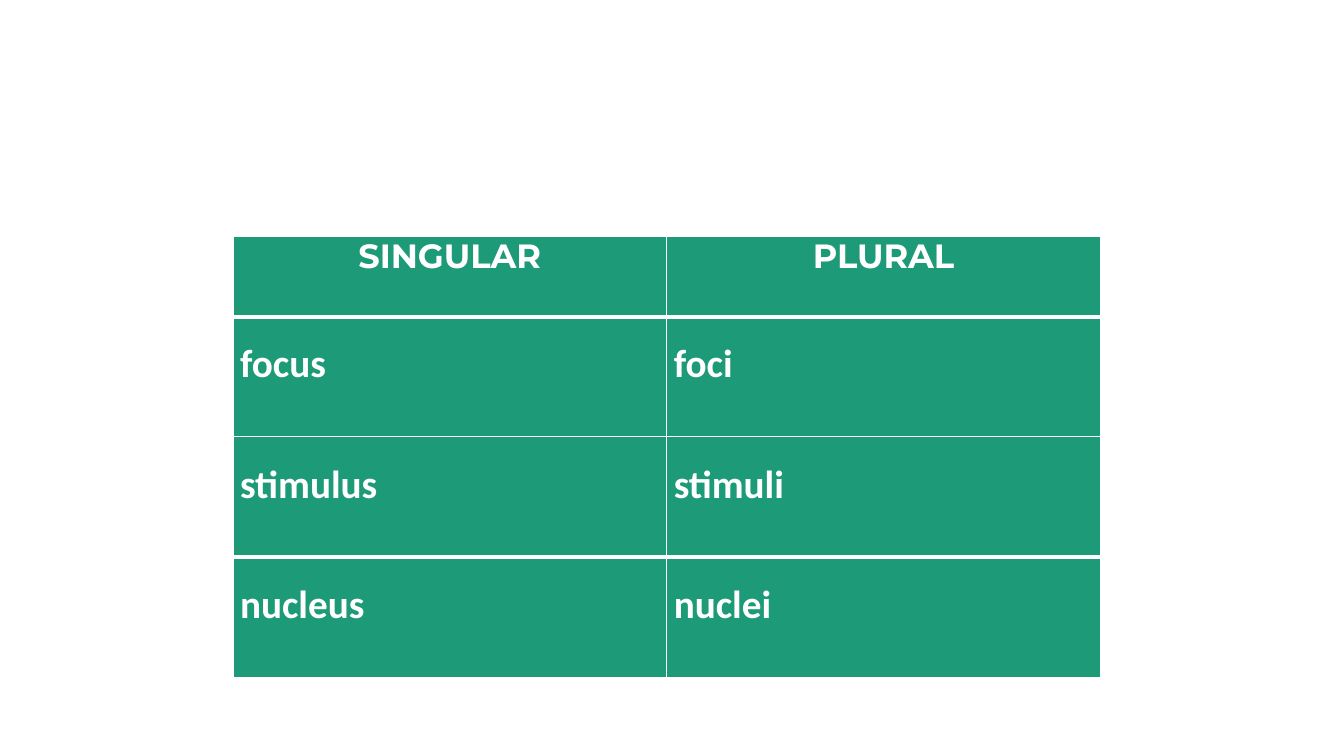
from dataclasses import dataclass

from lxml.etree import SubElement
from pptx import Presentation
from pptx.dml.color import RGBColor
from pptx.enum.text import MSO_ANCHOR, PP_ALIGN as Align
from pptx.oxml.ns import qn
from pptx.table import _Cell as Cell
from pptx.util import Cm, Pt

GREEN = "1D9A78"
WHITE = "FFFFFF"
THIN, THICK = 1, 3
COLUMN_WIDTH = 10.93


@dataclass
class WordRow:
    singular: str
    plural: str
    height: float = 3.03
    top_line: int = THIN
    bottom_line: int = THIN
    is_header: bool = False


ROWS = [
    WordRow("SINGULAR", "PLURAL", height=2.03, bottom_line=THICK, is_header=True),
    WordRow("focus", "foci", top_line=THICK),
    WordRow("stimulus", "stimuli", bottom_line=THICK),
    WordRow("nucleus", "nuclei", top_line=THICK),
]


def color(value: str) -> RGBColor:
    return RGBColor.from_string(value)


def write_text(cell: Cell, text: str, *, font: str, size: float,
               align: Align = Align.LEFT, spacing: float = 1.0) -> None:
    para = cell.text_frame.paragraphs[0]
    para.alignment = align
    para.line_spacing = spacing
    span = para.add_run()
    span.text = text
    span.font.name = font
    span.font.size = Pt(size)
    span.font.bold = True
    span.font.color.rgb = color(WHITE)


def draw_borders(cell: Cell, top: int, bottom: int) -> None:
    properties = cell._tc.get_or_add_tcPr()
    for side, width in {"L": THIN, "R": THIN, "T": top, "B": bottom}.items():
        line = SubElement(properties, qn(f"a:ln{side}"), w=str(Pt(width)))
        SubElement(SubElement(line, qn("a:solidFill")), qn("a:srgbClr"), val=WHITE)


def draw_cell(cell: Cell, text: str, row: WordRow) -> None:
    cell.margin_left = cell.margin_right = Cm(0.18)
    cell.margin_top = cell.margin_bottom = Cm(0)
    cell.vertical_anchor = MSO_ANCHOR.TOP
    # Borders come before the fill in the cell properties
    draw_borders(cell, row.top_line, row.bottom_line)
    cell.fill.solid()
    cell.fill.fore_color.rgb = color(GREEN)
    if row.is_header:
        write_text(cell, text, font="Montserrat", size=24, align=Align.CENTER)
    else:
        write_text(cell, text, font="Calibri", size=28, spacing=1.5)


def main() -> None:
    deck = Presentation()
    deck.slide_width, deck.slide_height = Cm(33.87), Cm(19.05)
    page = deck.slides.add_slide(deck.slide_layouts[6])

    # Table of singular and plural forms
    total_height = sum(row.height for row in ROWS)
    table = page.shapes.add_table(len(ROWS), 2, Cm(5.87), Cm(5.95),
                                  Cm(2 * COLUMN_WIDTH), Cm(total_height)).table
    table.horz_banding = False
    for column in table.columns:
        column.width = Cm(COLUMN_WIDTH)
    for index, row in enumerate(ROWS):
        table.rows[index].height = Cm(row.height)
        for position, word in enumerate((row.singular, row.plural)):
            draw_cell(table.cell(index, position), word, row)

    deck.save("out.pptx")


if __name__ == "__main__":
    main()
